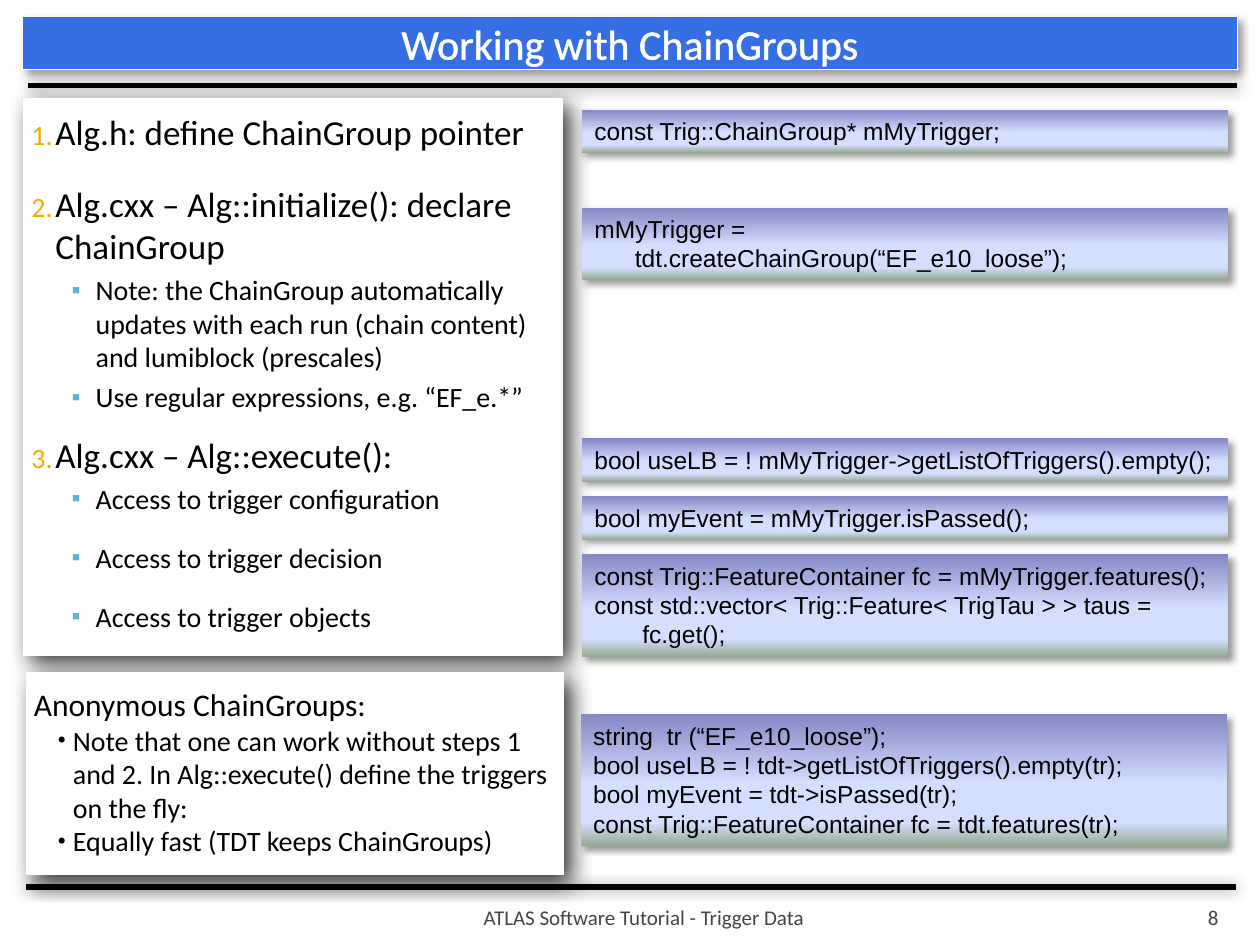
from lxml.etree import SubElement
from pptx import Presentation
from pptx.dml.color import RGBColor
from pptx.enum.shapes import MSO_CONNECTOR, MSO_SHAPE
from pptx.enum.text import MSO_ANCHOR, MSO_AUTO_SIZE, PP_ALIGN
from pptx.oxml.ns import qn
from pptx.util import Inches, Pt

BLACK = RGBColor(0x00, 0x00, 0x00)
WHITE = RGBColor(0xFF, 0xFF, 0xFF)
BLUE = RGBColor(0x35, 0x6F, 0xE3)
GREY = RGBColor(0x45, 0x45, 0x45)
GOLD = RGBColor(0xF0, 0xAD, 0x00)
TEAL = RGBColor(0x60, 0xB5, 0xCC)
CODE_GRADIENT = [
    (0, RGBColor(0x84, 0x88, 0xC4)),
    (53, RGBColor(0xD4, 0xDE, 0xFF)),
    (83, RGBColor(0xD4, 0xDE, 0xFF)),
    (100, RGBColor(0x96, 0xAB, 0x94)),
]

# Shadows: opacity in percent, blur and distance in points, angle in degrees
RULE_SHADOW = (50, 7.5, 0, 0)
PANEL_SHADOW = (78, 13, 6, 45)
SOFT_SHADOW = (40, 4, 3, 45)

PANEL_FRAME = {
    "margin_left": Inches(0.06), "margin_top": Inches(0.1),
    "margin_right": Inches(0.1), "margin_bottom": Inches(0.05),
    "vertical_anchor": MSO_ANCHOR.TOP,
}
FOOTER_FRAME = {"margin_bottom": 0, "vertical_anchor": MSO_ANCHOR.BOTTOM}
CODE_FRAME = {"vertical_anchor": MSO_ANCHOR.TOP, "auto_size": MSO_AUTO_SIZE.SHAPE_TO_FIT_TEXT}

# Lists: level, left margin, hanging indent, bullet (None for a number), size, colour
STEP = {"level": 0, "margin": 0.19, "hang": 0.19, "bullet": None, "percent": 80, "color": GOLD}
DETAIL = {"level": 1, "margin": 0.51, "hang": 0.19, "bullet": "▪", "percent": 90, "color": TEAL}
POINT = {"level": 0, "margin": 0.31, "hang": 0.12, "bullet": "•", "percent": 80, "color": BLACK}


def set_values(target, values):
    for name, value in values.items():
        setattr(target, name, value)


def add_color(parent, color):
    return SubElement(parent, qn("a:srgbClr"), val=str(color))


class SlideBuilder:
    def __init__(self, slide):
        self.slide = slide
        self.text_font = "Calibri"
        self.code_font = "Arial"

    def shadow(self, shape, opacity, blur, distance, angle):
        properties = shape._element.spPr
        effects = properties.find(qn("a:effectLst"))
        if effects is None:
            effects = SubElement(properties, qn("a:effectLst"))
        outer = SubElement(effects, qn("a:outerShdw"), blurRad=str(Pt(blur)), dist=str(Pt(distance)),
                           dir=str(angle * 60000), algn="tl", rotWithShape="0")
        SubElement(add_color(outer, BLACK), qn("a:alpha"), val=str(opacity * 1000))

    def rule(self, left, top, width):
        line = self.slide.shapes.add_connector(
            MSO_CONNECTOR.STRAIGHT, Inches(left), Inches(top), Inches(left + width), Inches(top))
        line.line.color.rgb = BLACK
        line.line.width = Pt(3)
        self.shadow(line, *RULE_SHADOW)

    def box(self, left, top, width, height, shadow, fill=None):
        """Add a rectangle: white-edged with a plain fill, or edgeless without one."""
        shape = self.slide.shapes.add_shape(
            MSO_SHAPE.RECTANGLE, Inches(left), Inches(top), Inches(width), Inches(height))
        if fill is None:
            shape.line.fill.background()
        else:
            shape.fill.solid()
            shape.fill.fore_color.rgb = fill
            shape.line.color.rgb = WHITE
            shape.line.width = Pt(0.75)
        shape.shadow.inherit = False
        self.shadow(shape, *shadow)
        shape.text_frame.word_wrap = True
        return shape

    def code_gradient(self, shape):
        properties = shape._element.spPr
        gradient = SubElement(properties, qn("a:gradFill"), rotWithShape="1")
        stops = SubElement(gradient, qn("a:gsLst"))
        for position, color in CODE_GRADIENT:
            add_color(SubElement(stops, qn("a:gs"), pos=str(position * 1000)), color)
        SubElement(gradient, qn("a:lin"), ang="5400000", scaled="0")
        properties.find(qn("a:prstGeom")).addnext(gradient)

    def add_text(self, frame, text, size, color=BLACK, font=None, align=PP_ALIGN.LEFT, before=0):
        """Fill the first paragraph of the frame, or add one if it has text."""
        paragraph = frame.add_paragraph() if frame.text else frame.paragraphs[0]
        set_values(paragraph, {"alignment": align, "space_before": Pt(before)})
        run = paragraph.add_run()
        run.text = text
        set_values(run.font, {"name": font or self.text_font, "size": Pt(size)})
        run.font.color.rgb = color
        return paragraph

    def list_item(self, frame, text, size, style, before=0):
        paragraph = self.add_text(frame, text, size, before=before)
        paragraph.level = style["level"]
        properties = paragraph._p.get_or_add_pPr()
        properties.set("marL", str(Inches(style["margin"])))
        properties.set("indent", str(-Inches(style["hang"])))
        add_color(SubElement(properties, qn("a:buClr")), style["color"])
        SubElement(properties, qn("a:buSzPct"), val=str(style["percent"] * 1000))
        if style["bullet"]:
            SubElement(properties, qn("a:buFont"), typeface="Arial")
            SubElement(properties, qn("a:buChar"), char=style["bullet"])
        else:
            SubElement(properties, qn("a:buAutoNum"), type="arabicPeriod")

    def title(self, text):
        shape = self.box(0.18, 0.13, 9.64, 0.42, SOFT_SHADOW, BLUE)
        shape.text_frame.vertical_anchor = MSO_ANCHOR.MIDDLE
        paragraph = self.add_text(shape.text_frame, text, 24, WHITE, align=PP_ALIGN.CENTER)
        properties = paragraph.runs[0]._r.get_or_add_rPr()
        outline = SubElement(properties, qn("a:ln"), w=str(Pt(0.83)))
        add_color(SubElement(outline, qn("a:solidFill")), WHITE)
        properties.insert(0, outline)

    def panel(self, left, top, width, height):
        frame = self.box(left, top, width, height, PANEL_SHADOW, WHITE).text_frame
        set_values(frame, PANEL_FRAME)
        return frame

    def code(self, left, top, height, lines):
        """Add a code box; each line is a text and its indent in inches."""
        shape = self.box(left, top, 5.13, height, SOFT_SHADOW)
        self.code_gradient(shape)
        set_values(shape.text_frame, CODE_FRAME)
        for text, indent in lines:
            paragraph = self.add_text(shape.text_frame, text, 14, font=self.code_font)
            if indent:
                paragraph._p.get_or_add_pPr().set("marL", str(Inches(indent)))

    def footer(self, left, width, text, align, margin):
        shape = self.slide.shapes.add_textbox(Inches(left), Inches(7.08), Inches(width), Inches(0.3))
        frame = shape.text_frame
        frame.word_wrap = True
        set_values(frame, FOOTER_FRAME)
        set_values(frame, {"margin_left": Inches(margin), "margin_right": Inches(margin)})
        self.add_text(frame, text, 12, GREY, align=align)


STEPS = [
    ("Alg.h: define ChainGroup pointer", 20, STEP, 0),
    ("Alg.cxx – Alg::initialize(): declare ChainGroup", 20, STEP, 17),
    ("Note: the ChainGroup automatically updates with each run (chain content) "
     "and lumiblock (prescales)", 16, DETAIL, 3.5),
    ("Use regular expressions, e.g. “EF_e.*”", 16, DETAIL, 3.5),
    ("Alg.cxx – Alg::execute():", 20, STEP, 11.5),
    ("Access to trigger configuration", 16, DETAIL, 3.5),
    ("Access to trigger decision", 16, DETAIL, 14.5),
    ("Access to trigger objects", 16, DETAIL, 14.5),
]
POINTS = [
    "Note that one can work without steps 1 and 2. In Alg::execute() define the triggers on the fly:",
    "Equally fast (TDT keeps ChainGroups)",
]
CODE_BOXES = [
    (4.62, 0.87, 0.34, [("const Trig::ChainGroup* mMyTrigger;", 0)]),
    (4.62, 1.65, 0.57, [("mMyTrigger =", 0), ("tdt.createChainGroup(“EF_e10_loose”);", 0.32)]),
    (4.62, 3.48, 0.34, [("bool useLB = ! mMyTrigger->getListOfTriggers().empty();", 0)]),
    (4.62, 3.94, 0.34, [("bool myEvent = mMyTrigger.isPassed();", 0)]),
    (4.62, 4.4, 0.81, [("const Trig::FeatureContainer fc = mMyTrigger.features();", 0),
                       ("const std::vector< Trig::Feature< TrigTau > > taus =", 0),
                       ("fc.get();", 0.38)]),
    (4.61, 5.67, 1.04, [("string  tr (“EF_e10_loose”);", 0),
                        ("bool useLB = ! tdt->getListOfTriggers().empty(tr);", 0),
                        ("bool myEvent = tdt->isPassed(tr);", 0),
                        ("const Trig::FeatureContainer fc = tdt.features(tr);", 0)]),
]


def main():
    presentation = Presentation()
    set_values(presentation, {"slide_width": Inches(10), "slide_height": Inches(7.5)})
    builder = SlideBuilder(presentation.slides.add_slide(presentation.slide_layouts[6]))

    builder.rule(0.22, 0.68, 9.6)
    builder.rule(0.21, 7.04, 9.6)
    builder.footer(2.1, 6.02, "ATLAS Software Tutorial - Trigger Data", PP_ALIGN.CENTER, 0.05)
    builder.footer(8.97, 0.8, "8", PP_ALIGN.RIGHT, 0.1)

    steps = builder.panel(0.19, 0.78, 4.27, 4.42)
    for text, size, style, before in STEPS:
        builder.list_item(steps, text, size, style, before)
    builder.title("Working with ChainGroups")

    anonymous = builder.panel(0.21, 5.34, 4.26, 1.6)
    builder.add_text(anonymous, "Anonymous ChainGroups:", 18)
    for text in POINTS:
        builder.list_item(anonymous, text, 16, POINT)

    for code_box in CODE_BOXES:
        builder.code(*code_box)
    presentation.save("out.pptx")


if __name__ == "__main__":
    main()
